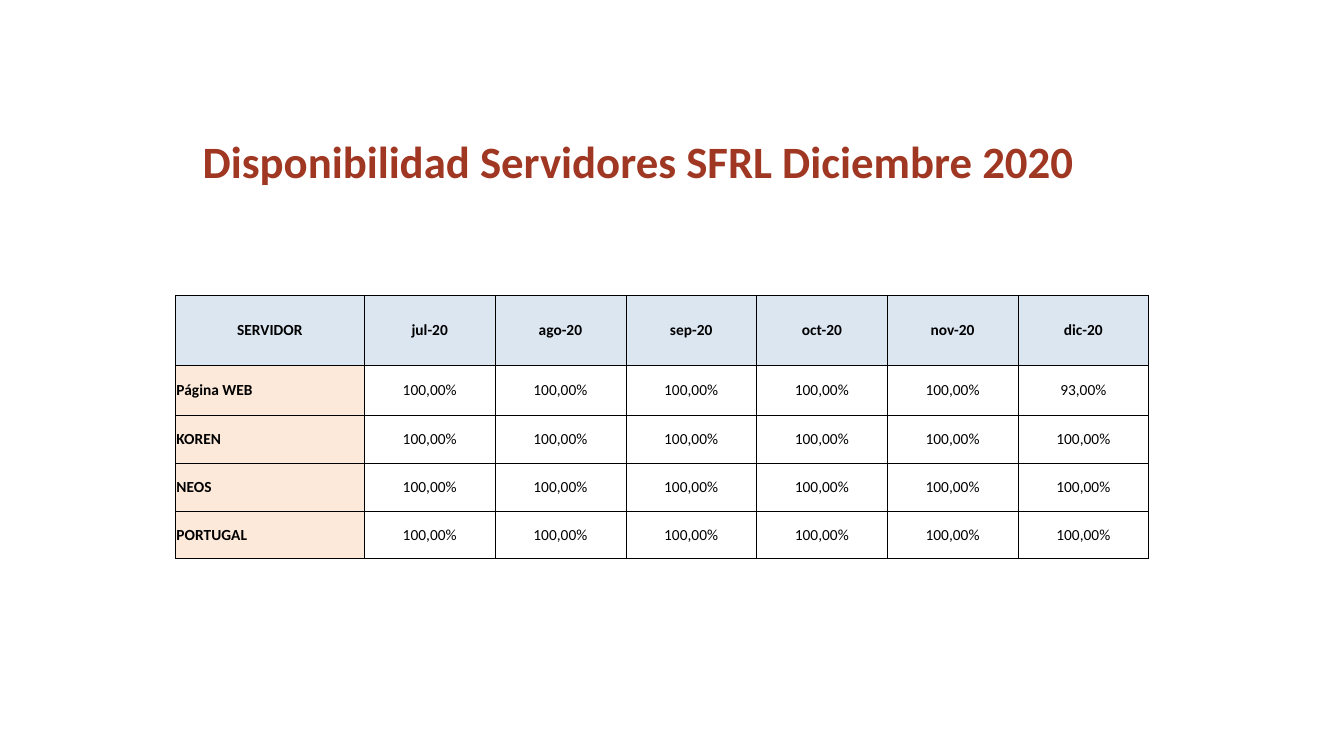
import pptx
import pptx.util
import pptx.oxml
import pptx.oxml.ns
import pptx.dml.color
import pptx.enum.text

Pt = pptx.util.Pt
RGBColor = pptx.dml.color.RGBColor
PP_ALIGN = pptx.enum.text.PP_ALIGN
MSO_ANCHOR = pptx.enum.text.MSO_ANCHOR

TITLE_RED = RGBColor(0xA0, 0x37, 0x23)
BLACK = RGBColor(0x00, 0x00, 0x00)
HEADER_BLUE = RGBColor(0xDC, 0xE6, 0xF1)
SERVER_PEACH = RGBColor(0xFD, 0xE9, 0xD9)

FULL = "100,00%"
ROWS = [
    ["SERVIDOR", "jul-20", "ago-20", "sep-20", "oct-20", "nov-20", "dic-20"],
    ["Página WEB"] + [FULL] * 5 + ["93,00%"],
    ["KOREN"] + [FULL] * 6,
    ["NEOS"] + [FULL] * 6,
    ["PORTUGAL"] + [FULL] * 6,
]
COLUMN_WIDTHS = [135] + [93.4] * 6
ROW_HEIGHTS = [49.6, 36] + [34.2] * 3
CELL_FORMAT = {
    "margin_left": Pt(0.75),
    "margin_right": Pt(0.75),
    "margin_top": Pt(0.75),
    "margin_bottom": Pt(0),
    "vertical_anchor": MSO_ANCHOR.MIDDLE,
}


def set_format(target, values):
    for name, value in values.items():
        setattr(target, name, value)


def add_borders(cell, color, width):
    properties = cell._tc.get_or_add_tcPr()
    for side in ("lnL", "lnR", "lnT", "lnB"):
        properties.append(pptx.oxml.parse_xml(
            f'<a:{side} {pptx.oxml.ns.nsdecls("a")} w="{width}"><a:solidFill>'
            f'<a:srgbClr val="{color}"/></a:solidFill></a:{side}>'
        ))


presentation = pptx.Presentation()
set_format(presentation, {"slide_width": Pt(960), "slide_height": Pt(540)})
slide = presentation.slides.add_slide(presentation.slide_layouts[5])

title = slide.shapes.title
set_format(title, {"left": Pt(137.5), "top": Pt(83.5), "width": Pt(651), "height": Pt(54.7)})
set_format(title.text_frame, {
    "text": "Disponibilidad Servidores SFRL Diciembre 2020",
    "vertical_anchor": MSO_ANCHOR.BOTTOM,
    "auto_size": pptx.enum.text.MSO_AUTO_SIZE.NONE,
    "word_wrap": True,
})
paragraph = title.text_frame.paragraphs[0]
set_format(paragraph, {"alignment": PP_ALIGN.LEFT, "line_spacing": 0.9})
set_format(paragraph.runs[0].font, {"name": "Calibri", "size": Pt(32), "bold": True})
paragraph.runs[0].font.color.rgb = TITLE_RED

shape = slide.shapes.add_table(
    len(ROWS), len(COLUMN_WIDTHS), Pt(125.3), Pt(211),
    Pt(sum(COLUMN_WIDTHS)), Pt(sum(ROW_HEIGHTS)),
)
table = shape.table
set_format(table, {"first_row": False, "horz_banding": False})
for column, width in zip(table.columns, COLUMN_WIDTHS):
    column.width = Pt(width)
for row, height in zip(table.rows, ROW_HEIGHTS):
    row.height = Pt(height)

for row_index, values in enumerate(ROWS):
    for column_index, value in enumerate(values):
        is_header = row_index == 0
        is_server = column_index == 0 and not is_header
        cell = table.cell(row_index, column_index)
        cell.text = value
        set_format(cell, CELL_FORMAT)
        add_borders(cell, BLACK, Pt(0.5))
        if is_header or is_server:
            cell.fill.solid()
            cell.fill.fore_color.rgb = HEADER_BLUE if is_header else SERVER_PEACH
        else:
            cell.fill.background()
        paragraph = cell.text_frame.paragraphs[0]
        paragraph.alignment = PP_ALIGN.LEFT if is_server else PP_ALIGN.CENTER
        font = paragraph.runs[0].font
        set_format(font, {"name": "Calibri", "size": Pt(11), "bold": is_header or is_server})
        font.color.rgb = BLACK

presentation.save("out.pptx")
